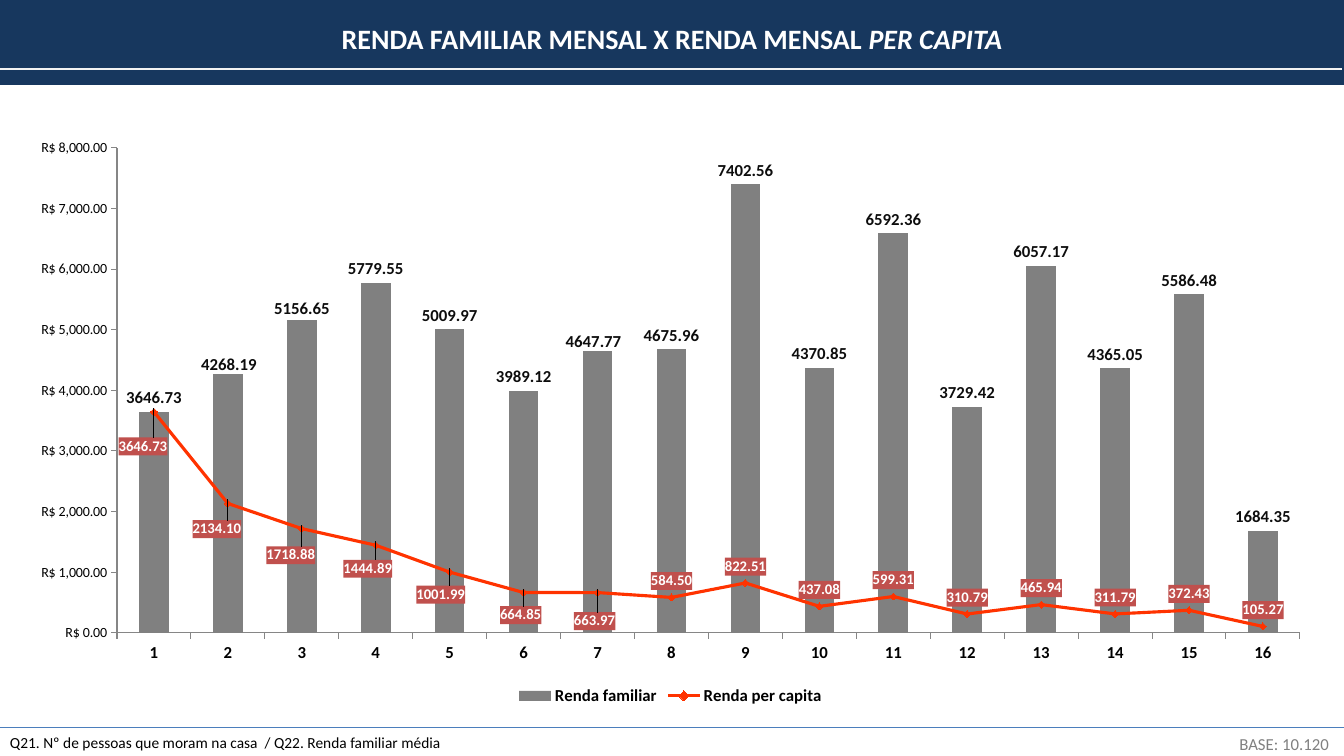
from copy import deepcopy
from dataclasses import dataclass

from pptx import Presentation
from pptx import util as u
from pptx.chart.data import CategoryChartData
from pptx.dml.color import RGBColor
from pptx.enum import chart as ch
from pptx.enum import shapes, text
from pptx.oxml import parse_xml
from pptx.oxml.ns import nsdecls, qn
from pptx.oxml.xmlchemy import OxmlElement

PX_PER_INCH = 100.8


@dataclass(frozen=True)
class Theme:
    font: str = "Calibri"
    navy: str = "17375E"
    white: str = "FFFFFF"
    rule: str = "F2F2F2"
    footer_rule: str = "4B7EBC"
    black: str = "000000"
    label: str = "0D0D0D"
    grey: str = "808080"
    axis: str = "868686"
    orange: str = "FF3300"
    label_fill: str = "C0504D"
    title_size: float = 20
    chart_size: float = 12
    axis_size: float = 10
    line_label_size: float = 10.5
    note_size: float = 11
    base_size: float = 12


THEME = Theme()

FAMILY_INCOME = [3646.73, 4268.19, 5156.65, 5779.55, 5009.97, 3989.12, 4647.77, 4675.96,
                 7402.56, 4370.85, 6592.36, 3729.42, 6057.17, 4365.05, 5586.48, 1684.35]
PER_CAPITA = [3646.73, 2134.10, 1718.88, 1444.89, 1001.99, 664.85, 663.97, 584.50,
              822.51, 437.08, 599.31, 310.79, 465.94, 311.79, 372.43, 105.27]

# Chart frame and inner plot, px: left, top, width, height
FRAME = (15, 128, 1311, 582)
PLOT = (102, 20, 1183, 485)

# Labels moved from their usual place: point index -> (right, down) in px
FAMILY_SHIFTS = {1: (1, 4), 2: (0, 2), 6: (-4, 5)}
PER_CAPITA_SHIFTS = {0: (-11, 51), 1: (-11, 42), 2: (-11, 43), 3: (-8, 40),
                     4: (-9, 39), 5: (-3, 39), 6: (-3, 45)}


def px(length):
    return u.Inches(length / PX_PER_INCH)


def set_all(target, **values):
    for name, value in values.items():
        setattr(target, name, value)


def style_font(font, size, color, **flags):
    set_all(font, name=THEME.font, size=u.Pt(size), **flags)
    font.color.rgb = RGBColor.from_string(color)


def write(shape, spans, size, color, align, **flags):
    """Fill a shape with one paragraph made of (text, italic) spans."""
    frame = shape.text_frame
    set_all(frame, word_wrap=True, auto_size=text.MSO_AUTO_SIZE.NONE)
    para = frame.paragraphs[0]
    para.alignment = align
    for words, italic in spans:
        span = para.add_run()
        span.text = words
        style_font(span.font, size, color, italic=italic, **flags)


def add_text(page, box, words, size, color, align):
    shape = page.shapes.add_textbox(*map(px, box))
    write(shape, [(words, False)], size, color, align)


def add_rule(page, left, right, y, color, width):
    rule = page.shapes.add_connector(shapes.MSO_CONNECTOR.STRAIGHT,
                                     px(left), px(y), px(right), px(y))
    rule.line.color.rgb = RGBColor.from_string(color)
    rule.line.width = u.Pt(width)
    rule.element.spPr.append(OxmlElement("a:effectLst"))


def add_banner(page):
    banner = page.shapes.add_shape(shapes.MSO_SHAPE.RECTANGLE, px(-1), 0, px(1345), px(85))
    banner.shadow.inherit = False
    banner.fill.solid()
    banner.fill.fore_color.rgb = RGBColor.from_string(THEME.navy)
    banner.line.fill.background()
    return banner


def add_title(page, banner):
    title = page.shapes.title
    set_all(title, left=0, top=px(16), width=px(1344), height=px(44))
    title.text_frame.vertical_anchor = text.MSO_ANCHOR.MIDDLE
    write(title, [("RENDA FAMILIAR MENSAL X RENDA MENSAL ", False), ("PER CAPITA", True)],
          THEME.title_size, THEME.white, text.PP_ALIGN.CENTER, bold=True)
    banner.element.addnext(title.element)


def manual_layout(x, y, size=None):
    """Layout in fractions of the chart frame, from lengths in px."""
    width, height = FRAME[2:]
    parts = {"x": x / width, "y": y / height}
    head = ""
    if size:
        parts.update(w=size[0] / width, h=size[1] / height)
        head = '<c:layoutTarget val="inner"/><c:xMode val="edge"/><c:yMode val="edge"/>'
    body = "".join(f'<c:{name} val="{value:.4f}"/>' for name, value in parts.items())
    return parse_xml(f'<c:layout {nsdecls("c")}><c:manualLayout>{head}{body}'
                     "</c:manualLayout></c:layout>")


def move_to_line_plot(chart):
    """Turn the second series into a line on the same axes."""
    bars = chart.element.xpath("//c:barChart")[0]
    series = bars.findall(qn("c:ser"))[1]
    for extra in series.findall(qn("c:invertIfNegative")):
        series.remove(extra)
    line = parse_xml(f'<c:lineChart {nsdecls("c")}><c:grouping val="standard"/>'
                     '<c:varyColors val="0"/><c:marker val="1"/></c:lineChart>')
    line.insert(2, series)
    for axis_id in bars.findall(qn("c:axId")):
        line.append(deepcopy(axis_id))
    bars.addnext(line)


def label_series(chart, number, position, size, color, shifts, fill=None):
    series = list(chart.series)[number]
    labels = series.data_labels
    set_all(labels, show_value=True, number_format="0.00",
            number_format_is_linked=False, position=position)
    style_font(labels.font, size, color, bold=True)
    group = chart.element.xpath("//c:ser/c:dLbls")[number]
    if fill:
        group.find(qn("c:numFmt")).addnext(parse_xml(
            f'<c:spPr {nsdecls("c", "a")}><a:solidFill><a:srgbClr val="{fill}"/>'
            "</a:solidFill></c:spPr>"))
    looks = [group.find(qn(tag)) for tag in ("c:numFmt", "c:spPr", "c:txPr")]
    for index, shift in shifts.items():
        series.points[index].data_label.position = position
        label = group.xpath(f"c:dLbl[c:idx/@val={index}]")[0]
        for old in label.xpath("c:spPr | c:txPr"):
            label.remove(old)
        parts = [manual_layout(*shift)] + [deepcopy(look) for look in looks if look is not None]
        for place, part in enumerate(parts, start=1):
            label.insert(place, part)


def style_axis(axis, size, **flags):
    set_all(axis, has_major_gridlines=False, major_tick_mark=ch.XL_TICK_MARK.OUTSIDE)
    style_font(axis.tick_labels.font, size, THEME.black, **flags)
    axis.format.line.color.rgb = RGBColor.from_string(THEME.axis)
    axis.format.line.width = u.Pt(0.75)


def add_income_chart(page):
    data = CategoryChartData(number_format="0.00")
    data.categories = [str(people) for people in range(1, 17)]
    data.add_series("Renda familiar", FAMILY_INCOME)
    data.add_series("Renda per capita", PER_CAPITA)
    chart = page.shapes.add_chart(ch.XL_CHART_TYPE.COLUMN_CLUSTERED,
                                  *map(px, FRAME), data).chart
    move_to_line_plot(chart)
    set_all(chart, has_title=False, has_legend=True)
    style_font(chart.font, THEME.chart_size, THEME.black)

    # Axes, legend and plot area
    style_axis(chart.category_axis, THEME.chart_size, bold=True)
    style_axis(chart.value_axis, THEME.axis_size, bold=False)
    set_all(chart.value_axis, minimum_scale=0, maximum_scale=8000, major_unit=1000)
    set_all(chart.value_axis.tick_labels, number_format='"R$"\\ #,##0.00',
            number_format_is_linked=False)
    set_all(chart.legend, position=ch.XL_LEGEND_POSITION.BOTTOM, include_in_layout=False)
    style_font(chart.legend.font, THEME.chart_size, THEME.black, bold=True)
    area = chart.element.xpath("//c:plotArea")[0]
    for old in area.findall(qn("c:layout")):
        area.remove(old)
    area.insert(0, manual_layout(*PLOT[:2], size=PLOT[2:]))

    # Bars and line
    bars, line = chart.plots
    set_all(bars, gap_width=150, vary_by_categories=False)
    fill = bars.series[0].format.fill
    fill.solid()
    fill.fore_color.rgb = RGBColor.from_string(THEME.grey)
    capita = line.series[0]
    capita.smooth = False
    orange = RGBColor.from_string(THEME.orange)
    capita.format.line.color.rgb = orange
    capita.format.line.width = u.Pt(2.25)
    set_all(capita.marker, style=ch.XL_MARKER_STYLE.DIAMOND, size=5)
    capita.marker.format.fill.solid()
    capita.marker.format.fill.fore_color.rgb = orange
    capita.marker.format.line.color.rgb = orange

    # Value labels
    label_series(chart, 0, ch.XL_LABEL_POSITION.OUTSIDE_END, THEME.chart_size,
                 THEME.label, FAMILY_SHIFTS)
    label_series(chart, 1, ch.XL_LABEL_POSITION.ABOVE, THEME.line_label_size,
                 THEME.white, PER_CAPITA_SHIFTS, THEME.label_fill)


def main():
    deck = Presentation()
    set_all(deck, slide_width=px(1344), slide_height=px(756))
    page = deck.slides.add_slide(deck.slide_layouts[5])

    # Footer
    add_rule(page, 0, 1344, 728, THEME.footer_rule, 0.75)
    add_text(page, (0, 728, 1342, 29),
             "Q21. Nº de pessoas que moram na casa  / Q22. Renda familiar média",
             THEME.note_size, THEME.black, text.PP_ALIGN.LEFT)

    # Header
    add_title(page, add_banner(page))
    add_rule(page, -3, 1342, 69, THEME.rule, 1)

    # Chart and sample base
    add_income_chart(page)
    add_text(page, (1109, 729, 230, 30), "BASE: 10.120",
             THEME.base_size, THEME.grey, text.PP_ALIGN.RIGHT)
    deck.save("out.pptx")


if __name__ == "__main__":
    main()
